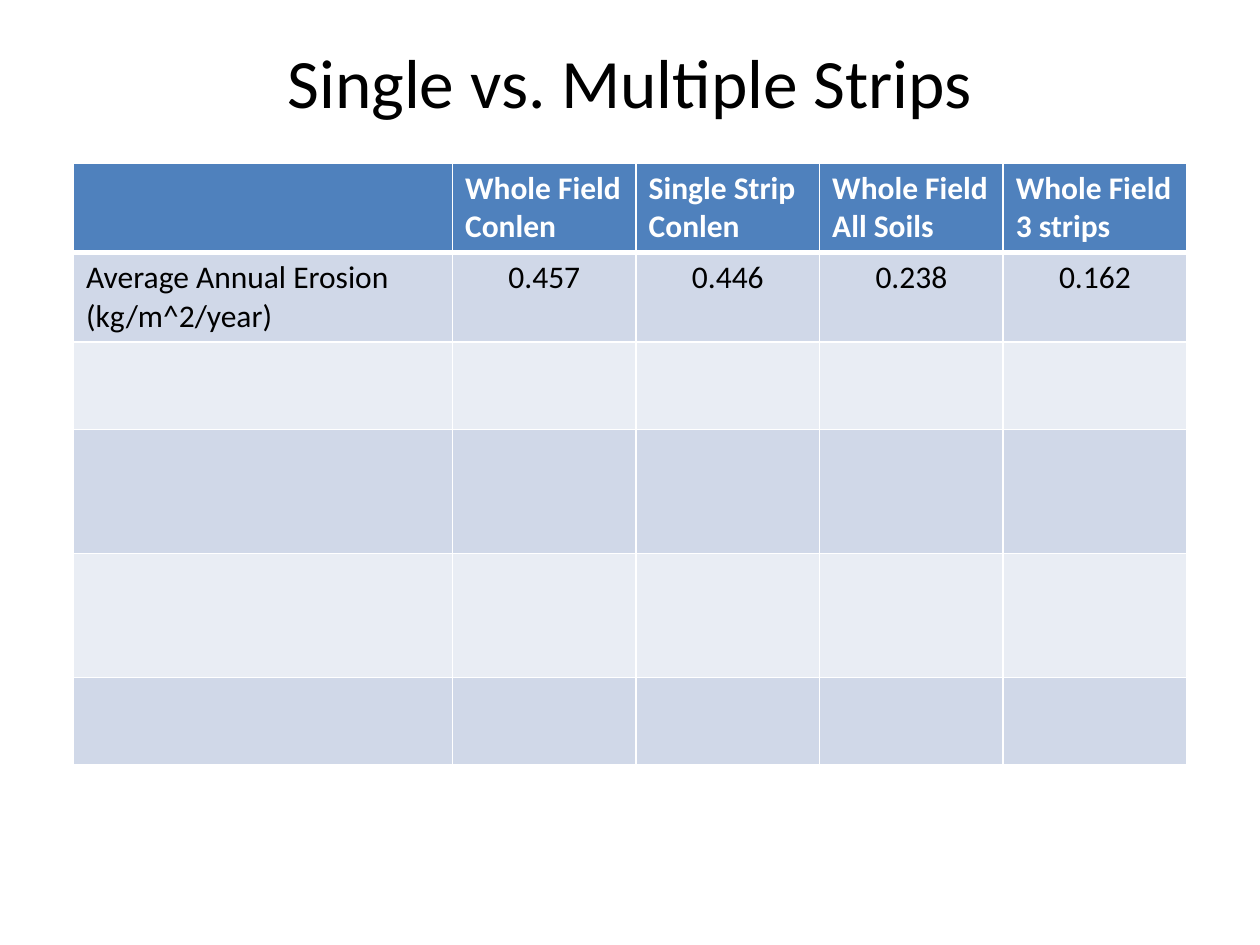
import pptx
import pptx.util
import pptx.dml.color
import pptx.enum.text
import lxml.etree

Pt = pptx.util.Pt
ALIGN = pptx.enum.text.PP_ALIGN

TITLE = "Single vs. Multiple Strips"
HEADER = ["", "Whole Field Conlen", "Single Strip Conlen",
          "Whole Field All Soils", "Whole Field 3 strips"]
EROSION = ["Average Annual Erosion (kg/m^2/year)", "0.457", "0.446", "0.238", "0.162"]
EMPTY_ROWS = 4
ROWS = [HEADER, EROSION] + [[""] * len(HEADER)] * EMPTY_ROWS

FONT = "Calibri"
COLORS = {"header": "4F81BD", "odd": "D0D8E8", "even": "E9EDF4",
          "white": "FFFFFF", "black": "000000"}
LEFT, TOP = 42, 93
COL_WIDTHS = [216.6] + [104.9] * 4
ROW_HEIGHTS = [51, 50, 50, 71, 71, 50]
THIN, THICK = 1, 3


def rgb(name):
    return pptx.dml.color.RGBColor.from_string(COLORS[name])


def add_run(p, text, size, color, bold=False):
    r = p.add_run()
    r.text = text
    r.font.name = FONT
    r.font.size = Pt(size)
    r.font.bold = bold
    r.font.color.rgb = rgb(color)


def set_borders(cell, widths):
    """Add white borders; call before the fill, which must follow them in the XML."""
    tc_pr = cell._tc.get_or_add_tcPr()
    for side, width in widths.items():
        ln = lxml.etree.SubElement(tc_pr, pptx.oxml.ns.qn(f"a:ln{side}"), w=str(Pt(width)))
        fill = lxml.etree.SubElement(ln, pptx.oxml.ns.qn("a:solidFill"))
        lxml.etree.SubElement(fill, pptx.oxml.ns.qn("a:srgbClr"), val=COLORS["white"])


def add_title(s):
    title = s.shapes.title
    title.left, title.top, title.width, title.height = Pt(36), Pt(18), Pt(648), Pt(56)
    tf = title.text_frame
    tf.word_wrap = True
    tf.auto_size = pptx.enum.text.MSO_AUTO_SIZE.NONE
    tf.vertical_anchor = pptx.enum.text.MSO_ANCHOR.MIDDLE
    p = tf.paragraphs[0]
    p.alignment = ALIGN.CENTER
    add_run(p, TITLE, 39.6, "black")


def add_erosion_table(s):
    table = s.shapes.add_table(len(ROWS), len(HEADER), Pt(LEFT), Pt(TOP),
                               Pt(sum(COL_WIDTHS)), Pt(sum(ROW_HEIGHTS))).table
    for column, width in zip(table.columns, COL_WIDTHS):
        column.width = Pt(width)
    for i, (row, height, texts) in enumerate(zip(table.rows, ROW_HEIGHTS, ROWS)):
        row.height = Pt(height)
        is_header = i == 0
        band = "header" if is_header else ("odd" if i % 2 else "even")
        borders = {"L": THIN, "R": THIN,
                   "T": THICK if i == 1 else THIN,
                   "B": THICK if is_header else THIN}
        for j, (cell, text) in enumerate(zip(row.cells, texts)):
            set_borders(cell, borders)
            cell.fill.solid()
            cell.fill.fore_color.rgb = rgb(band)
            if text:
                p = cell.text_frame.paragraphs[0]
                p.alignment = ALIGN.LEFT if is_header or j == 0 else ALIGN.CENTER
                add_run(p, text, 18, "white" if is_header else "black", is_header)


def main():
    prs = pptx.Presentation()
    prs.slide_width, prs.slide_height = Pt(720), Pt(540)
    s = prs.slides.add_slide(prs.slide_layouts[5])
    add_title(s)
    add_erosion_table(s)
    prs.save("out.pptx")


if __name__ == "__main__":
    main()
